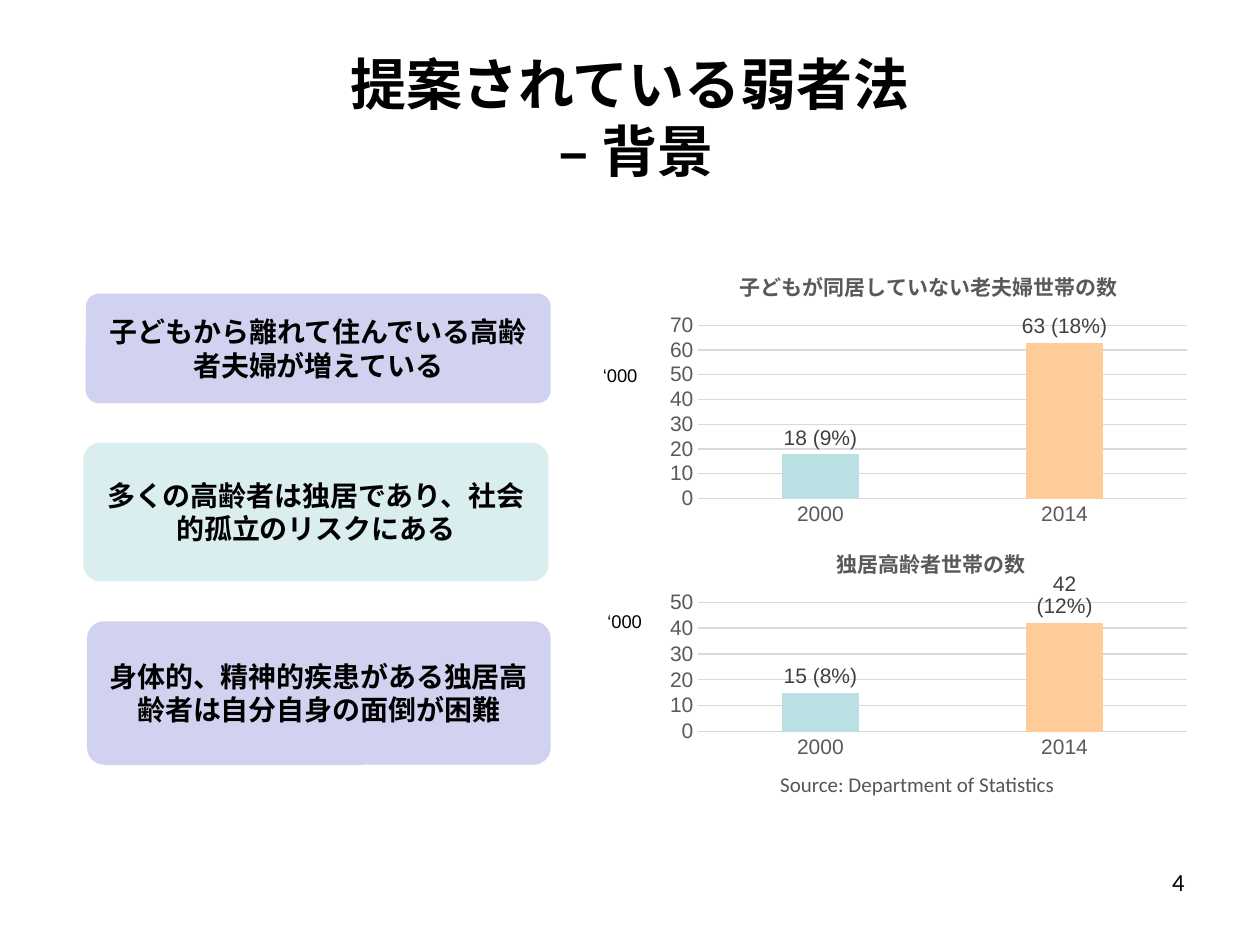
from dataclasses import dataclass

from lxml import etree
from pptx import Presentation
from pptx import util as u
from pptx.chart import data as chart_data
from pptx.dml import color
from pptx.enum import chart as charts, shapes, text
from pptx.oxml import ns


@dataclass(frozen=True)
class Theme:
    heading_font: str = "Calibri"
    body_font: str = "Arial"
    black: str = "000000"
    source_grey: str = "555555"
    axis_grey: str = "595959"
    label_grey: str = "404040"
    grid_grey: str = "D9D9D9"
    lilac: str = "D1D1F0"
    mint: str = "DAEDEF"
    teal: str = "BBE0E3"
    peach: str = "FFCC99"
    title_size: float = 32
    box_size: float = 16
    number_size: float = 14
    chart_size: float = 12
    unit_size: float = 10.5


def rgb(value):
    return color.RGBColor.from_string(value)


def points(*values):
    return [u.Pt(value) for value in values]


def style_font(font, name, size, colour, bold=False):
    font.name, font.size, font.bold = name, u.Pt(size), bold
    font.color.rgb = rgb(colour)


def set_layout(parent, index, inner=False, **fractions):
    """Place a chart part by fractions of the chart frame."""
    for old in parent.findall(ns.qn("c:layout")):
        parent.remove(old)
    layout = etree.Element(ns.qn("c:layout"))
    manual = etree.SubElement(layout, ns.qn("c:manualLayout"))
    settings = {"layoutTarget": "inner"} if inner else {}
    settings.update(xMode="edge", yMode="edge", **fractions)
    for tag, value in settings.items():
        etree.SubElement(manual, ns.qn(f"c:{tag}")).set("val", str(value))
    parent.insert(index, layout)


class SlideBuilder:
    def __init__(self, slide, theme):
        self.slide, self.theme = slide, theme

    def add_run(self, paragraph, words, *style):
        run = paragraph.add_run()
        run.text = words
        style_font(run.font, *style)

    def title(self, lines, frame):
        shape = self.slide.shapes.title
        shape.left, shape.top, shape.width, shape.height = points(*frame)
        text_frame = shape.text_frame
        text_frame.auto_size = text.MSO_AUTO_SIZE.NONE
        text_frame.vertical_anchor = text.MSO_ANCHOR.MIDDLE
        paragraph = text_frame.paragraphs[0]
        paragraph.alignment = text.PP_ALIGN.CENTER
        for index, line in enumerate(lines):
            if index:
                paragraph.add_line_break()
            self.add_run(paragraph, line, self.theme.heading_font,
                         self.theme.title_size, self.theme.black, True)

    def label(self, words, frame, font, size, colour, align):
        text_frame = self.slide.shapes.add_textbox(*points(*frame)).text_frame
        text_frame.word_wrap = True
        paragraph = text_frame.paragraphs[0]
        paragraph.alignment = align
        self.add_run(paragraph, words, font, size, colour)

    def box(self, words, frame, fill):
        shape = self.slide.shapes.add_shape(
            shapes.MSO_SHAPE.ROUNDED_RECTANGLE, *points(*frame))
        shape.adjustments[0] = 0.12
        shape.shadow.inherit = False
        shape.fill.solid()
        shape.fill.fore_color.rgb = rgb(fill)
        shape.line.fill.background()
        text_frame = shape.text_frame
        text_frame.word_wrap = True
        text_frame.vertical_anchor = text.MSO_ANCHOR.MIDDLE
        paragraph = text_frame.paragraphs[0]
        paragraph.alignment = text.PP_ALIGN.CENTER
        self.add_run(paragraph, words, self.theme.body_font,
                     self.theme.box_size, self.theme.black, True)

    def column_chart(self, heading, frame, values, labels, maximum, title_at, plot_at):
        theme = self.theme
        data = chart_data.CategoryChartData()
        data.categories = ["2000", "2014"]
        data.add_series("Series 1", values)
        chart = self.slide.shapes.add_chart(
            charts.XL_CHART_TYPE.COLUMN_CLUSTERED, *points(*frame), data).chart
        chart.has_legend = False
        style_font(chart.font, theme.body_font, theme.chart_size, theme.axis_grey)

        # Heading and plot area
        self.add_run(chart.chart_title.text_frame.paragraphs[0], heading,
                     theme.body_font, theme.chart_size, theme.axis_grey, True)
        chart.chart_title.include_in_layout = False
        title_x, title_y = title_at
        set_layout(chart.chart_title._element, 1, x=title_x, y=title_y)
        plot_y, plot_height = plot_at
        plot = chart.plots[0]
        set_layout(plot._element.getparent(), 0, inner=True,
                   x=0.07, y=plot_y, w=0.91, h=plot_height)

        # Axes
        for axis in (chart.category_axis, chart.value_axis):
            axis.major_tick_mark = axis.minor_tick_mark = charts.XL_TICK_MARK.NONE
            style_font(axis.tick_labels.font, theme.body_font,
                       theme.chart_size, theme.axis_grey)
        value_axis = chart.value_axis
        value_axis.minimum_scale, value_axis.maximum_scale = 0, maximum
        value_axis.major_unit = 10
        value_axis.format.line.fill.background()
        for line in (chart.category_axis.format.line,
                     value_axis.major_gridlines.format.line):
            line.color.rgb = rgb(theme.grid_grey)
            line.width = u.Pt(0.75)

        # Columns and their labels
        plot.gap_width, plot.overlap = 219, -27
        plot.vary_by_categories = False
        series = plot.series[0]
        series.format.fill.solid()
        series.format.fill.fore_color.rgb = rgb(theme.teal)
        last_fill = series.points[1].format.fill
        last_fill.solid()
        last_fill.fore_color.rgb = rgb(theme.peach)
        for index, words in enumerate(labels):
            data_label = series.points[index].data_label
            self.add_run(data_label.text_frame.paragraphs[0], words,
                         theme.body_font, theme.chart_size, theme.label_grey)
            data_label.position = charts.XL_LABEL_POSITION.OUTSIDE_END


def main():
    presentation = Presentation()
    presentation.slide_width, presentation.slide_height = points(720, 540)
    theme = Theme()
    slide = presentation.slides.add_slide(presentation.slide_layouts[5])
    builder = SlideBuilder(slide, theme)
    align = text.PP_ALIGN

    builder.title(["提案されている弱者法", " – 背景"], (36, 21.6, 648, 90))

    # Findings
    builder.box("子どもから離れて住んでいる高齢者夫婦が増えている",
                (49, 167.8, 265.7, 62.6), theme.lilac)
    builder.box("多くの高齢者は独居であり、社会的孤立のリスクにある",
                (47.7, 253, 265.7, 79.2), theme.mint)
    builder.box("身体的、精神的疾患がある独居高齢者は自分自身の面倒が困難",
                (49.7, 355, 265, 82), theme.lilac)

    # Household charts with their units
    builder.column_chart("子どもが同居していない老夫婦世帯の数",
                         (377.6, 144.4, 306.7, 159.8), (18, 63),
                         ("18 (9%)", "63 (18%)"), 70, (0.14, 0.04), (0.26, 0.62))
    builder.column_chart("独居高齢者世帯の数",
                         (377.6, 302.4, 306.7, 134.6), (15, 42),
                         ("15 (8%)", "42 (12%)"), 50, (0.32, 0.05), (0.31, 0.55))
    for left, top in ((337.4, 204.5), (340, 344.9)):
        builder.label("‘000", (left, top, 39.6, 20.2), theme.body_font,
                      theme.unit_size, theme.black, align.LEFT)

    # Source and slide number
    builder.label("Source: Department of Statistics", (399.6, 437.4, 249.1, 21.6),
                  theme.heading_font, theme.chart_size, theme.source_grey, align.CENTER)
    builder.label("4", (516.2, 491.8, 167.8, 37.4), theme.heading_font,
                  theme.number_size, theme.black, align.RIGHT)

    presentation.save("out.pptx")


if __name__ == "__main__":
    main()
